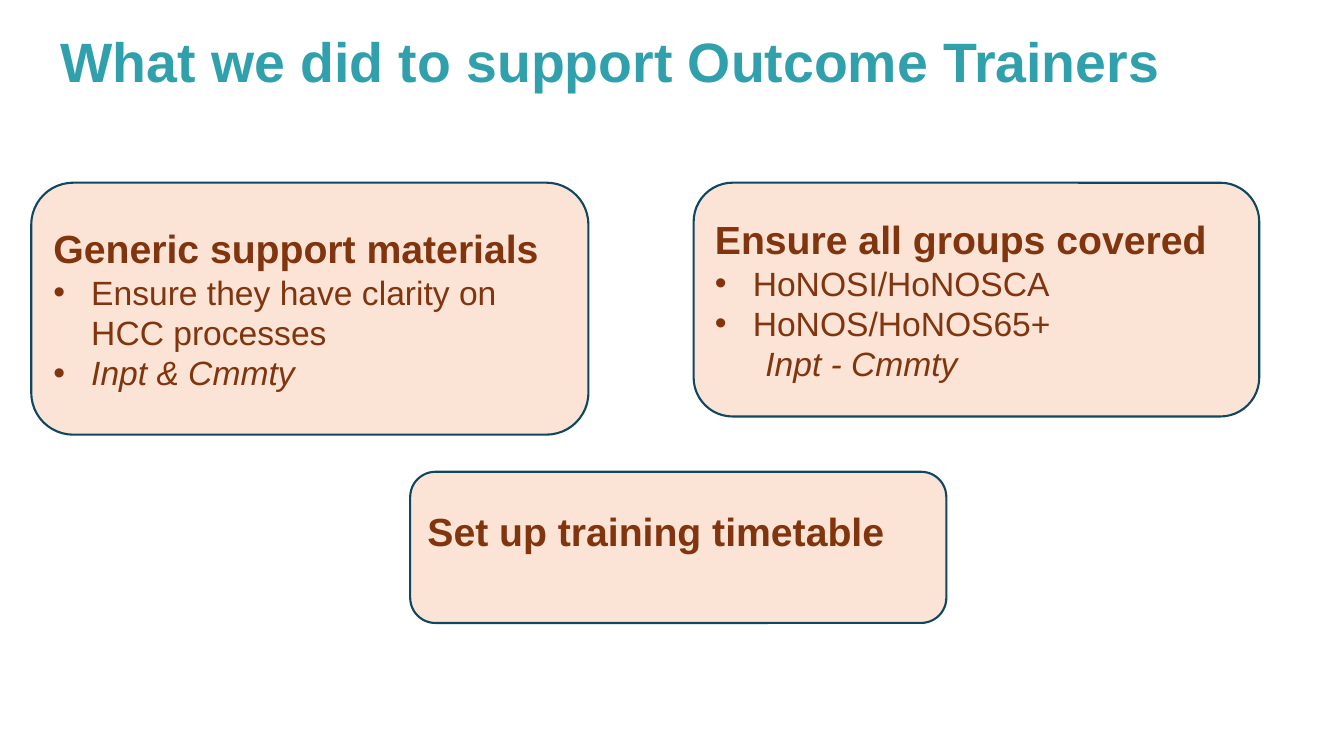
"""Build the slide on support for Outcome Trainers."""
import pptx
import pptx.dml.color
import pptx.enum.shapes
import pptx.enum.text
import pptx.oxml.ns
import pptx.util
from lxml import etree

Pt = pptx.util.Pt
TEAL = pptx.dml.color.RGBColor(0x30, 0xA1, 0xAC)
PEACH = pptx.dml.color.RGBColor(0xFB, 0xE3, 0xD6)
NAVY = pptx.dml.color.RGBColor(0x10, 0x47, 0x60)
BROWN = pptx.dml.color.RGBColor(0x80, 0x35, 0x0E)
FONT = "Arial"
BULLET_INDENT = 27
CARD_TOP = 130.5


def style(paragraph, size, color, bold=False, italic=False):
    paragraph.alignment = pptx.enum.text.PP_ALIGN.LEFT
    font = paragraph.font
    font.name = FONT
    font.size = Pt(size)
    font.color.rgb = color
    font.bold = bold
    font.italic = italic


def indent(paragraph, left, bullet):
    properties = paragraph._p.get_or_add_pPr()
    properties.set("marL", str(Pt(left)))
    if bullet:
        properties.set("indent", str(-Pt(left)))
        for tag, name, value in (("a:buFont", "typeface", FONT), ("a:buChar", "char", "•")):
            etree.SubElement(properties, pptx.oxml.ns.qn(tag)).set(name, value)


def add_title(slide, wording):
    title = slide.shapes.title
    title.left, title.top, title.width, title.height = Pt(36), Pt(15.84), Pt(828), Pt(61.2)
    frame = title.text_frame
    frame.text = wording
    frame.word_wrap = True
    frame.auto_size = pptx.enum.text.MSO_AUTO_SIZE.NONE
    frame.vertical_anchor = pptx.enum.text.MSO_ANCHOR.MIDDLE
    heading = frame.paragraphs[0]
    heading.line_spacing = 0.9
    style(heading, 39.6, TEAL, bold=True)


def add_card(slide, bounds, heading, points=(), bottom_inset=3.6):
    card = slide.shapes.add_shape(
        pptx.enum.shapes.MSO_SHAPE.ROUNDED_RECTANGLE, *map(Pt, bounds))
    card.shadow.inherit = False
    card.fill.solid()
    card.fill.fore_color.rgb = PEACH
    card.line.color.rgb = NAVY
    card.line.width = Pt(1.5)
    frame = card.text_frame
    frame.word_wrap = True
    frame.vertical_anchor = pptx.enum.text.MSO_ANCHOR.MIDDLE
    frame.margin_bottom = Pt(bottom_inset)
    frame.text = heading
    style(frame.paragraphs[0], 28, BROWN, bold=True)
    for wording, left, bullet, italic in points:
        point = frame.add_paragraph()
        point.text = wording
        indent(point, left, bullet)
        style(point, 24, BROWN, italic=italic)


def main():
    deck = pptx.Presentation()
    deck.slide_width, deck.slide_height = Pt(960), Pt(540)
    slide = deck.slides.add_slide(deck.slide_layouts.get_by_name("Title Only"))
    add_title(slide, "What we did to support Outcome Trainers")
    add_card(slide, (495.5, CARD_TOP, 404, 167), "Ensure all groups covered", (
        ("HoNOSI/HoNOSCA", BULLET_INDENT, True, False),
        ("HoNOS/HoNOS65+", BULLET_INDENT, True, False),
        ("Inpt - Cmmty", 36, False, True)))
    add_card(slide, (293, 337, 383, 108), "Set up training timetable", bottom_inset=26.6)
    add_card(slide, (22.3, CARD_TOP, 398, 180), "Generic support materials", (
        ("Ensure they have clarity on HCC processes", BULLET_INDENT, True, False),
        ("Inpt & Cmmty", BULLET_INDENT, True, True)))
    deck.save("out.pptx")


if __name__ == "__main__":
    main()
